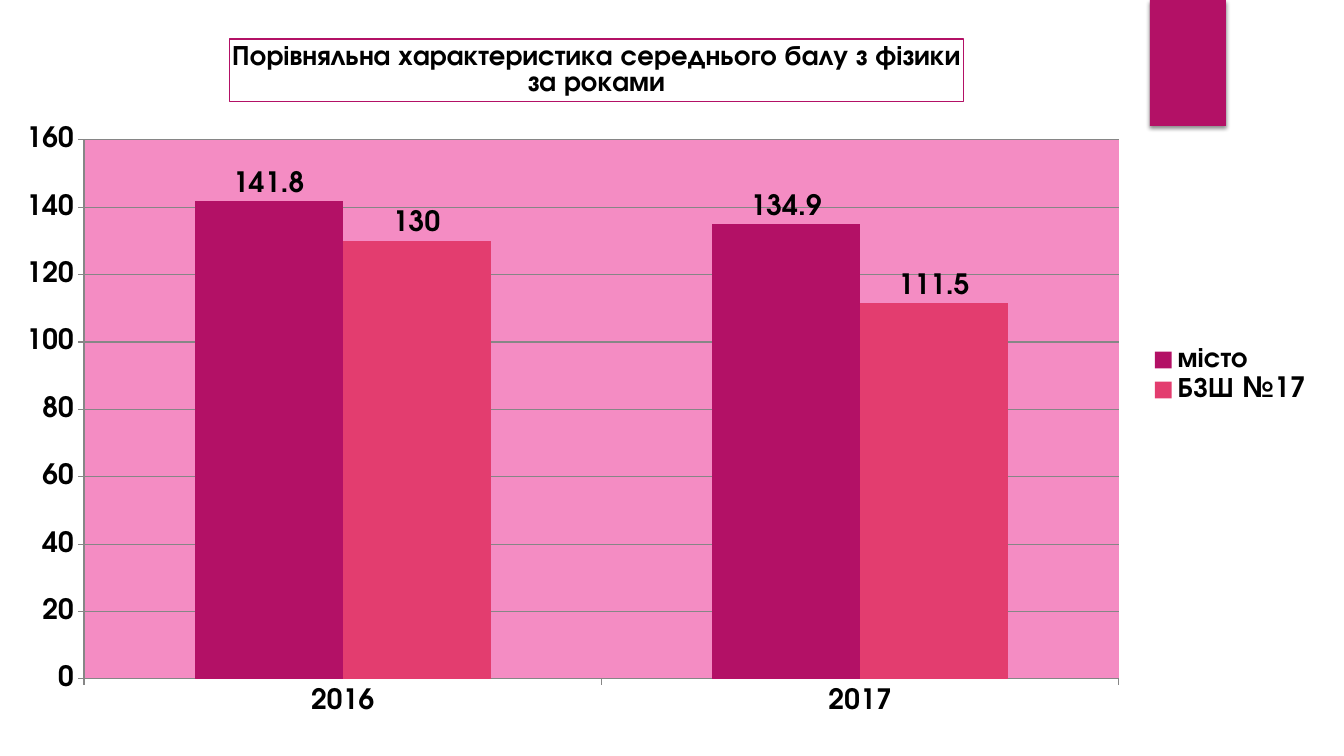
from lxml import etree
from pptx import Presentation
from pptx.chart.data import CategoryChartData
from pptx.dml.color import RGBColor
from pptx.enum.chart import XL_CHART_TYPE as ChartType
from pptx.enum.chart import XL_LABEL_POSITION as LabelPosition
from pptx.enum.chart import XL_LEGEND_POSITION as LegendPosition
from pptx.enum.chart import XL_TICK_MARK as TickMark
from pptx.enum.shapes import MSO_SHAPE as Shape
from pptx.enum.text import PP_ALIGN as Align
from pptx.oxml import parse_xml
from pptx.oxml.ns import nsdecls, qn
from pptx.util import Pt

COLORS = {
    "magenta": "B31166",
    "rose": "E33D6F",
    "pink": "F48CC3",
    "text": "000000",
    "grid": "868686",
}
FONT = {"name": "TeX Gyre Adventor", "size": Pt(20), "bold": True}
EMU_PER_PX = 914400 / 100.8
CHART_BOX = (0, 21, 1323, 709)
TITLE_LINES = [
    "Порівняльна характеристика середнього балу з фізики",
    "за роками",
]
YEARS = ["2016", "2017"]
SCORES = {
    "місто": ([141.8, 134.9], "magenta"),
    "БЗШ №17": ([130, 111.5], "rose"),
}


def px(value):
    return round(value * EMU_PER_PX)


def color(name):
    return RGBColor.from_string(COLORS[name])


class SlideBuilder:
    def __init__(self, slide):
        self.slide = slide

    def style_font(self, font):
        for attribute, value in FONT.items():
            setattr(font, attribute, value)
        font.color.rgb = color("text")

    def fill(self, fill, name):
        fill.solid()
        fill.fore_color.rgb = color(name)

    def line(self, line, name):
        line.color.rgb = color(name)
        line.width = Pt(0.75)

    def accent(self, box, name):
        shape = self.slide.shapes.add_shape(Shape.RECTANGLE, *map(px, box))
        self.fill(shape.fill, name)
        shape.line.fill.background()
        shape.shadow.inherit = False
        effects = shape._element.spPr.find(qn("a:effectLst"))
        effects.append(parse_xml(
            f'<a:outerShdw {nsdecls("a")} blurRad="{Pt(3)}" dist="{Pt(2)}" '
            'dir="5400000" rotWithShape="0"><a:srgbClr val="000000">'
            '<a:alpha val="45000"/></a:srgbClr></a:outerShdw>'))

    def place(self, element, index, box, inner=False):
        for layout in element.findall(qn("c:layout")):
            element.remove(layout)
        left, top, width, height = CHART_BOX
        x, y, w, h = box
        settings = {"layoutTarget": "inner"} if inner else {}
        settings |= {"xMode": "edge", "yMode": "edge"}
        settings |= {"x": (x - left) / width, "y": (y - top) / height}
        if w:
            settings |= {"w": w / width, "h": h / height}
        layout = parse_xml(f'<c:layout {nsdecls("c")}><c:manualLayout/></c:layout>')
        for tag, value in settings.items():
            text = value if isinstance(value, str) else f"{value:.4f}"
            etree.SubElement(layout[0], qn(f"c:{tag}")).set("val", text)
        element.insert(index, layout)

    def chart(self, years, scores):
        data = CategoryChartData()
        data.categories = years
        for name, (values, _) in scores.items():
            data.add_series(name, values)
        frame = self.slide.shapes.add_chart(
            ChartType.COLUMN_CLUSTERED, *map(px, CHART_BOX), data)
        chart = frame.chart
        self.style_font(chart.font)
        plot = chart.plots[0]
        plot.gap_width = 150
        plot.overlap = 0
        plot.vary_by_categories = False
        for series, (_, name) in zip(plot.series, scores.values()):
            self.fill(series.format.fill, name)
            labels = series.data_labels
            labels.show_value = True
            labels.position = LabelPosition.OUTSIDE_END
            self.style_font(labels.font)
        return chart

    def axes(self, chart):
        for axis in (chart.category_axis, chart.value_axis):
            axis.major_tick_mark = TickMark.OUTSIDE
            axis.minor_tick_mark = TickMark.NONE
            self.line(axis.format.line, "grid")
            self.style_font(axis.tick_labels.font)
        axis = chart.value_axis
        for attribute, value in {"minimum_scale": 0, "maximum_scale": 160,
                                 "major_unit": 20, "has_major_gridlines": True}.items():
            setattr(axis, attribute, value)
        self.line(axis.major_gridlines.format.line, "grid")

    def plot_area(self, chart, box, name):
        area = chart._chartSpace.chart.plotArea
        self.place(area, 0, box, inner=True)
        area.append(parse_xml(
            f'<c:spPr {nsdecls("c", "a")}><a:solidFill>'
            f'<a:srgbClr val="{COLORS[name]}"/></a:solidFill></c:spPr>'))

    def title(self, chart, lines, box):
        chart.has_title = True
        title = chart.chart_title
        frame = title.text_frame
        for index, text in enumerate(lines):
            paragraph = frame.add_paragraph() if index else frame.paragraphs[0]
            paragraph.alignment = Align.CENTER
            run = paragraph.add_run()
            run.text = text
            self.style_font(run.font)
        title.include_in_layout = True
        self.line(title.format.line, "magenta")
        self.place(title._element, 1, box)

    def legend(self, chart, box):
        chart.has_legend = True
        legend = chart.legend
        legend.position = LegendPosition.RIGHT
        legend.include_in_layout = False
        self.style_font(legend.font)
        self.place(legend._element, 1, box)


def main():
    presentation = Presentation()
    presentation.slide_width = px(1344)
    presentation.slide_height = px(756)
    slide = presentation.slides.add_slide(presentation.slide_layouts[6])
    builder = SlideBuilder(slide)
    builder.accent((1150, 0, 76, 126), "magenta")
    chart = builder.chart(YEARS, SCORES)
    builder.axes(chart)
    builder.plot_area(chart, (84, 140, 1035, 539), "pink")
    builder.title(chart, TITLE_LINES, (229, 39, 0, 0))
    builder.legend(chart, (1148, 343, 165, 64))
    presentation.save("out.pptx")


if __name__ == "__main__":
    main()
